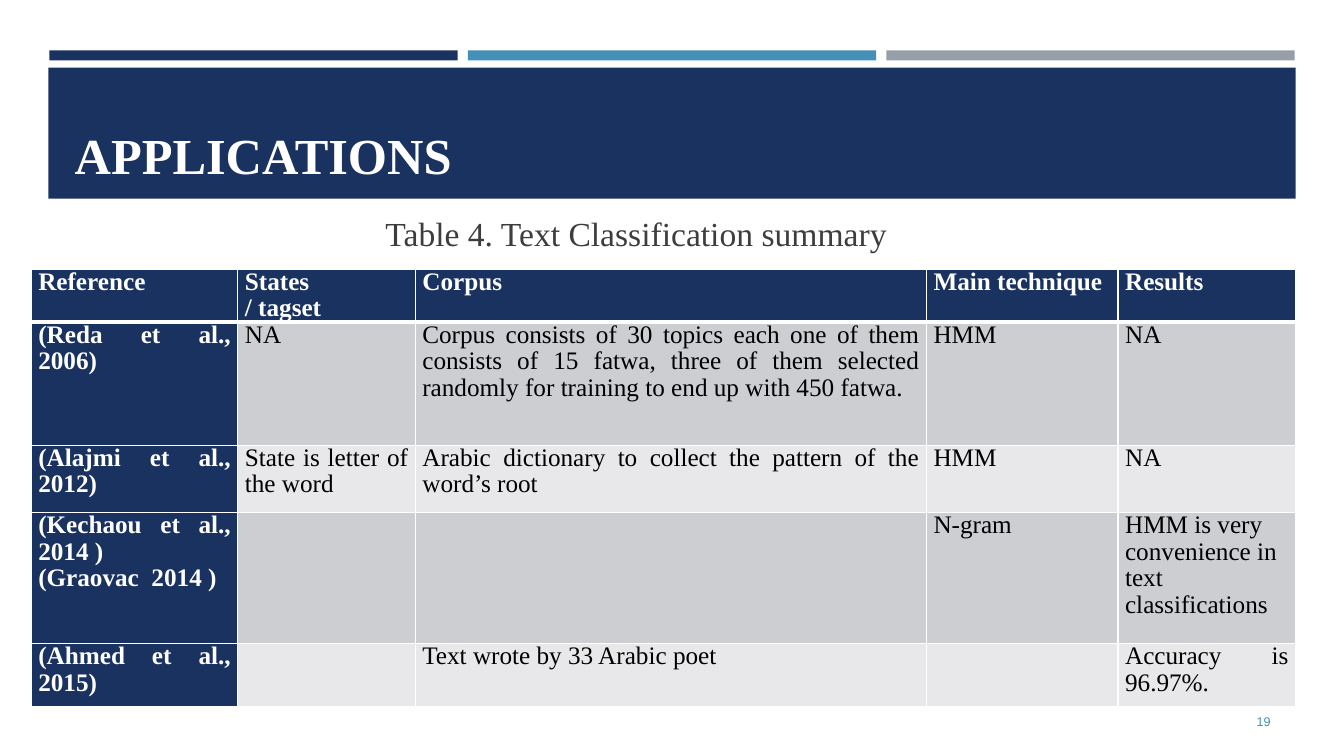
"""Build the slide that sums up text classification work in a table."""
from dataclasses import dataclass

import pptx
import pptx.dml.color
import pptx.enum.shapes
import pptx.enum.text
import pptx.oxml
import pptx.oxml.ns
import pptx.util

Inches = pptx.util.Inches
Pt = pptx.util.Pt
Align = pptx.enum.text.PP_ALIGN
Anchor = pptx.enum.text.MSO_ANCHOR

COLORS = {
    "navy": "1A3260", "blue": "4590B8", "gray": "969FA7", "white": "FFFFFF",
    "black": "000000", "text": "3D3D3D", "dark": "CDCED2", "light": "E8E8EA",
}
SERIF = "Times New Roman"
WIDTHS = [2.05, 1.76, 5.07, 1.9, 1.76]
HEIGHTS = [0.4, 1.22, 0.67, 1.3, 0.62]
ROWS = [
    ["Reference", "States\n/ tagset", "Corpus", "Main technique", "Results"],
    ["(Reda et al., 2006)", "NA",
     "Corpus consists of 30 topics each one of them consists of 15 fatwa, "
     "three of them selected randomly for training to end up with 450 fatwa.",
     "HMM", "NA"],
    ["(Alajmi et al., 2012)", "State is letter of the word",
     "Arabic dictionary to collect the pattern of the word’s root", "HMM", "NA"],
    ["(Kechaou et al., 2014 )\n(Graovac  2014 )", "", "", "N-gram",
     "HMM is very convenience in text classifications"],
    ["(Ahmed et al., 2015)", "", "Text wrote by 33 Arabic poet", "",
     "Accuracy is 96.97%."],
]
LEFT_CELL = (3, 4)


@dataclass
class Box:
    """Place and size in inches."""
    left: float
    top: float
    width: float
    height: float

    def span(self) -> list:
        """Return the four lengths for python-pptx."""
        return [Inches(n) for n in (self.left, self.top, self.width, self.height)]


@dataclass
class Bar:
    """A filled band."""
    box: Box
    color: str


@dataclass
class Style:
    """Look of a text."""
    size: float
    color: str
    align: Align
    font: str = SERIF
    bold: bool = False
    after: float = 0
    line: float = 1.0


@dataclass
class Label:
    """A free line of text."""
    box: Box
    text: str
    style: Style
    anchor: Anchor = Anchor.TOP


BARS = [Bar(Box(0.49 + 4.15 * i, 0.5, 4.05, 0.1), color)
        for i, color in enumerate(("navy", "blue", "gray"))]
BARS.append(Bar(Box(0.48, 0.67, 12.37, 1.3), "navy"))
LABELS = [
    Label(Box(11.55, 6.96, 1.15, 0.4), "19",
          Style(9, "blue", Align.RIGHT, "Arial"), Anchor.MIDDLE),
    Label(Box(1.84, 2.06, 8.94, 0.5), "Table 4. Text Classification summary",
          Style(24, "text", Align.CENTER, after=10)),
]


def tint(name: str) -> pptx.dml.color.RGBColor:
    """Look up a colour."""
    return pptx.dml.color.RGBColor.from_string(COLORS[name])


def write(frame, text: str, style: Style) -> None:
    """Put styled text in a frame."""
    frame.text = text
    frame.word_wrap = True
    for para in frame.paragraphs:
        para.alignment = style.align
        para.space_before = Pt(0)
        para.space_after = Pt(style.after)
        para.line_spacing = style.line
        for font in [para.font] + [run.font for run in para.runs]:
            font.size = Pt(style.size)
            font.name = style.font
            font.bold = style.bold
            font.color.rgb = tint(style.color)


def draw_bar(slide, bar: Bar) -> None:
    """Draw one band."""
    shape = slide.shapes.add_shape(
        pptx.enum.shapes.MSO_SHAPE.RECTANGLE, *bar.box.span())
    shape.shadow.inherit = False
    shape.fill.solid()
    shape.fill.fore_color.rgb = tint(bar.color)
    shape.line.fill.background()


def draw_title(slide, text: str) -> None:
    """Fill and place the title."""
    title = slide.shapes.title
    title.left, title.top, title.width, title.height = Box(0.64, 0.77, 12.06, 1.11).span()
    write(title.text_frame, text, Style(36, "white", Align.LEFT, bold=True))
    title.text_frame.vertical_anchor = Anchor.BOTTOM


def draw_label(slide, label: Label) -> None:
    """Draw one text box."""
    frame = slide.shapes.add_textbox(*label.box.span()).text_frame
    write(frame, label.text, label.style)
    frame.vertical_anchor = label.anchor


def edge(cell, side: str, width: float) -> None:
    """Add a white border on one side of a cell."""
    space = pptx.oxml.ns.nsdecls("a")
    line = pptx.oxml.parse_xml(
        f'<a:{side} {space} w="{Pt(width)}"><a:solidFill>'
        f'<a:srgbClr val="{COLORS["white"]}"/></a:solidFill></a:{side}>')
    props = cell._tc.get_or_add_tcPr()
    props.insert(len(props) - 1, line)


def draw_cell(cell, row: int, col: int) -> None:
    """Fill, write and edge one cell."""
    head = row == 0 or col == 0
    cell.margin_left = cell.margin_right = Inches(0.07)
    cell.margin_top = cell.margin_bottom = Inches(0)
    cell.fill.solid()
    cell.fill.fore_color.rgb = tint(
        "navy" if head else "dark" if row % 2 else "light")
    align = Align.LEFT if (row, col) == LEFT_CELL else Align.JUSTIFY
    color = "white" if head else "black"
    write(cell.text_frame, ROWS[row][col],
          Style(18, color, align, bold=head, line=0.95))
    for side in ("lnL", "lnR", "lnT", "lnB"):
        rule = (row, side) in ((0, "lnB"), (1, "lnT"))
        edge(cell, side, 3 if rule else 1)


def draw_table(slide) -> None:
    """Draw the summary table."""
    box = Box(0.31, 2.67, sum(WIDTHS), sum(HEIGHTS))
    table = slide.shapes.add_table(len(ROWS), len(WIDTHS), *box.span()).table
    table.first_col = True
    for col, width in zip(table.columns, WIDTHS):
        col.width = Inches(width)
    for row, height in zip(table.rows, HEIGHTS):
        row.height = Inches(height)
    for row in range(len(ROWS)):
        for col in range(len(WIDTHS)):
            draw_cell(table.cell(row, col), row, col)


def main() -> None:
    """Build and save the deck."""
    deck = pptx.Presentation()
    deck.slide_width, deck.slide_height = Inches(13.33), Inches(7.5)
    slide = deck.slides.add_slide(deck.slide_layouts[5])
    for bar in BARS:
        draw_bar(slide, bar)
    title = slide.shapes.title._element
    title.getparent().append(title)
    draw_title(slide, "APPLICATIONS")
    draw_table(slide)
    for label in LABELS:
        draw_label(slide, label)
    deck.save("out.pptx")


if __name__ == "__main__":
    main()
